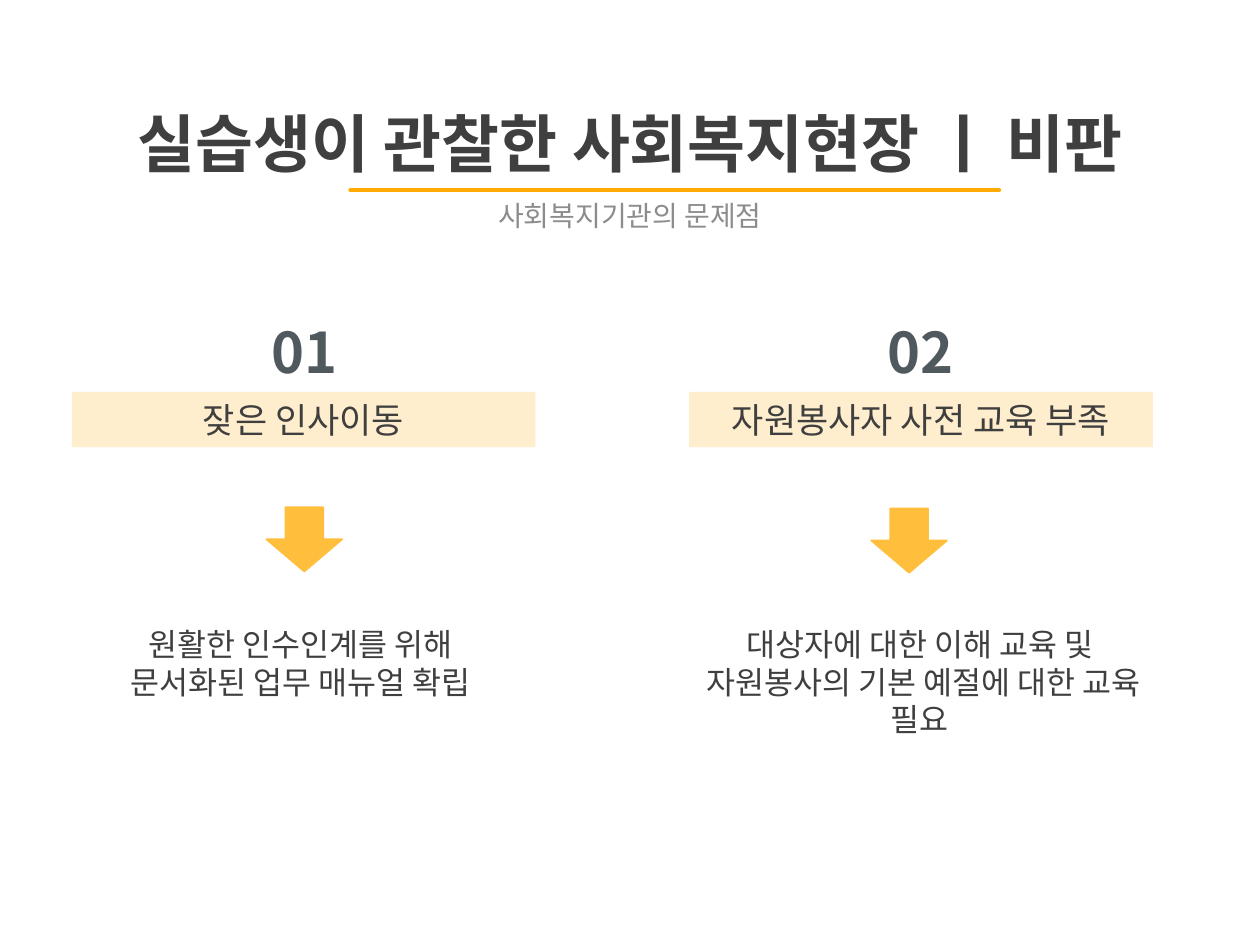
import pptx
import pptx.util
import pptx.dml.color
import pptx.enum.shapes
import pptx.enum.text
import pptx.oxml.ns
import lxml.etree

Inches = pptx.util.Inches
RGBColor = pptx.dml.color.RGBColor
MSO_SHAPE = pptx.enum.shapes.MSO_SHAPE
ANCHOR = pptx.enum.text.MSO_ANCHOR
AUTO_SIZE = pptx.enum.text.MSO_AUTO_SIZE
qn = pptx.oxml.ns.qn

INK = RGBColor(0x3F, 0x3F, 0x3F)
GREY = RGBColor(0x8C, 0x8C, 0x8C)
SLATE = RGBColor(0x50, 0x59, 0x5D)
CREAM = RGBColor(0xFF, 0xEE, 0xCD)
AMBER = RGBColor(0xFF, 0xBE, 0x3B)
ORANGE = RGBColor(0xFF, 0xAB, 0x03)

FONT = "Noto Sans CJK KR"
TITLE = {"size": pptx.util.Pt(36), "bold": True, "color": INK}
SUBTITLE = {"size": pptx.util.Pt(16), "color": GREY}
NUMBER = {"size": pptx.util.Pt(32), "bold": True, "color": SLATE}
LABEL = {"size": pptx.util.Pt(20), "color": INK}
BODY = {"size": pptx.util.Pt(18), "color": INK}


class SlideBuilder:
    def __init__(self, slide, font):
        self.slide = slide
        self.font = font

    def fill_text(self, sp, lines, style, anchor=ANCHOR.TOP, fit=AUTO_SIZE.SHAPE_TO_FIT_TEXT, **spacing):
        tf = sp.text_frame
        for name, value in {"word_wrap": True, "auto_size": fit, "vertical_anchor": anchor}.items():
            setattr(tf, name, value)
        for i, line in enumerate(lines):
            p = tf.paragraphs[0] if i == 0 else tf.add_paragraph()
            p.alignment = pptx.enum.text.PP_ALIGN.CENTER
            for name, value in spacing.items():
                setattr(p, name, value)
            r = p.add_run()
            r.text = line
            r.font.name = self.font
            for name, value in style.items():
                if name == "color":
                    r.font.color.rgb = value
                else:
                    setattr(r.font, name, value)
            # Hangul takes the East Asian font
            ea = lxml.etree.Element(qn("a:ea"), typeface=self.font)
            r._r.rPr.find(qn("a:latin")).addnext(ea)

    def placeholder(self, idx, box, line, style, **options):
        sp = self.slide.placeholders[idx]
        for name, value in zip(("left", "top", "width", "height"), box):
            setattr(sp, name, Inches(value))
        self.fill_text(sp, [line], style, fit=AUTO_SIZE.NONE, line_spacing=0.9, **options)
        return sp

    def text(self, box, lines, style):
        sp = self.slide.shapes.add_textbox(*map(Inches, box))
        self.fill_text(sp, lines, style)

    def shape(self, kind, box, fill, line=None):
        sp = self.slide.shapes.add_shape(kind, *map(Inches, box))
        sp.shadow.inherit = False
        sp.fill.solid()
        sp.fill.fore_color.rgb = fill
        if line is None:
            sp.line.fill.background()
        else:
            sp.line.color.rgb = line
            sp.line.width = pptx.util.Pt(1)
        return sp

    def band(self, box, label):
        sp = self.shape(MSO_SHAPE.RECTANGLE, box, CREAM)
        self.fill_text(sp, [label], LABEL, anchor=ANCHOR.MIDDLE)

    def down_arrow(self, left, top):
        sp = self.shape(MSO_SHAPE.RIGHT_ARROW, (left, top, 0.51, 0.6), AMBER, AMBER)
        sp.rotation = 90

    def rule(self, x1, x2, y):
        ln = self.slide.shapes.add_connector(
            pptx.enum.shapes.MSO_CONNECTOR.STRAIGHT, *map(Inches, (x1, y, x2, y)))
        ln.line.color.rgb = ORANGE
        ln.line.width = pptx.util.Pt(2.25)
        spPr = ln._element.spPr
        spPr.find(qn("a:ln")).set("cap", "rnd")
        lxml.etree.SubElement(spPr, qn("a:effectLst"))


def main():
    prs = pptx.Presentation()
    prs.slide_width, prs.slide_height = Inches(10), Inches(7.5)
    s = SlideBuilder(prs.slides.add_slide(prs.slide_layouts[1]), FONT)

    # Heading
    s.placeholder(0, (0.82, 0.69, 8.36, 0.95), "실습생이 관찰한 사회복지현장 ㅣ 비판", TITLE,
                  anchor=ANCHOR.MIDDLE)
    sub = s.placeholder(1, (0.81, 1.56, 8.38, 0.31), "사회복지기관의 문제점", SUBTITLE,
                        space_before=pptx.util.Pt(10))
    pPr = sub.text_frame.paragraphs[0]._p.get_or_add_pPr()
    pPr.set("marL", "0")
    pPr.set("indent", "0")
    lxml.etree.SubElement(pPr, qn("a:buNone"))
    s.rule(2.78, 7.93, 1.51)

    # Columns: number, number left, band left, label, arrow place, text box, text
    columns = [
        ("01", 1.94, 0.57, "잦은 인사이동", (2.16, 3.98), (0.28, 4.91, 4.26, 0.71),
         ["원활한 인수인계를 위해 ", "문서화된 업무 매뉴얼 확립 "]),
        ("02", 6.83, 5.47, "자원봉사자 사전 교육 부족", (6.96, 3.99), (5.32, 4.91, 3.96, 1.01),
         ["대상자에 대한 이해 교육 및", " 자원봉사의 기본 예절에 대한 교육", "필요"]),
    ]
    for number, number_left, band_left, label, arrow, box, lines in columns:
        s.text((number_left, 2.47, 0.95, 0.64), [number], NUMBER)
        s.band((band_left, 3.11, 3.68, 0.44), label)
        s.down_arrow(*arrow)
        s.text(box, lines, BODY)

    prs.save("out.pptx")


if __name__ == "__main__":
    main()
